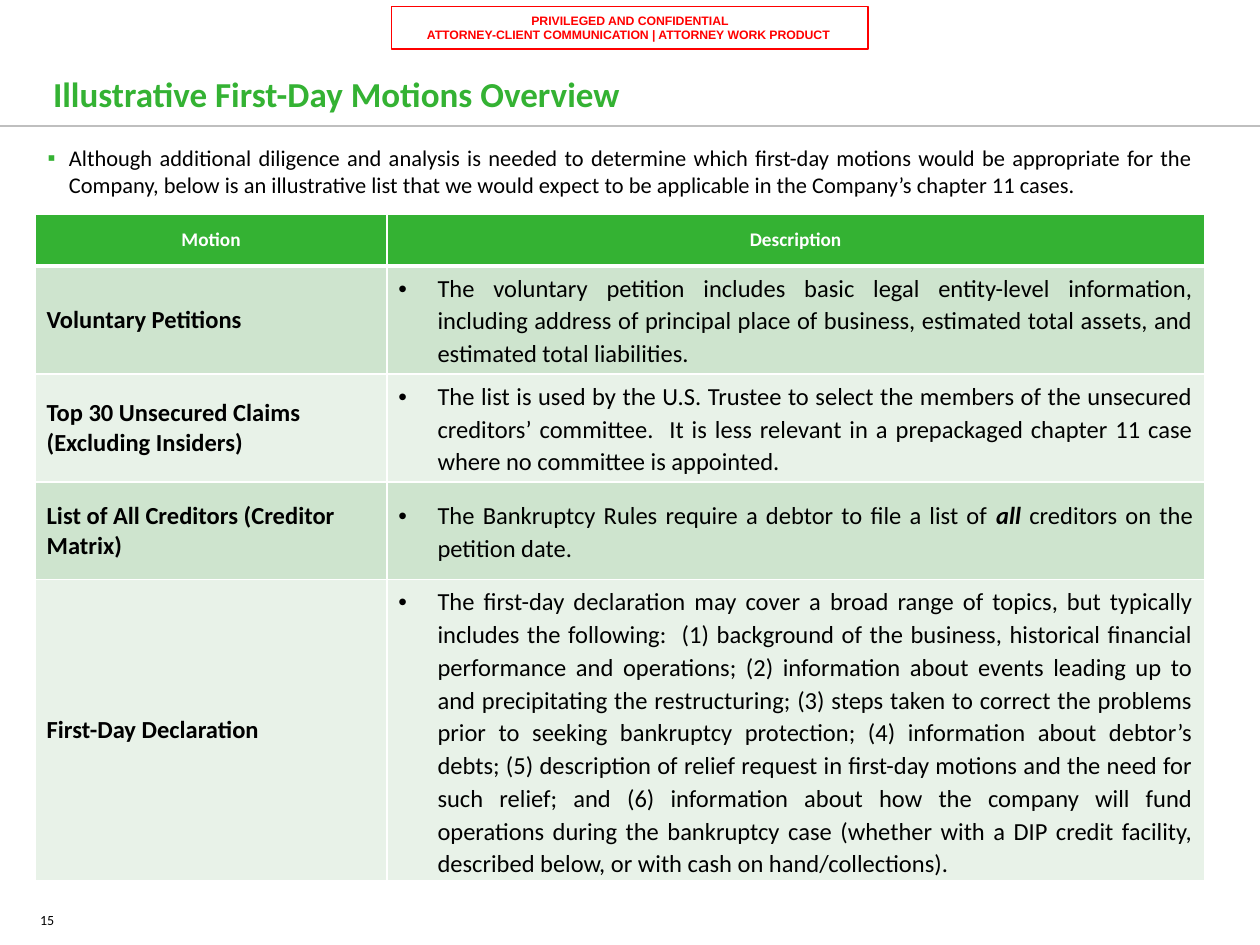
from lxml import etree
from pptx import Presentation, util as u
from pptx.dml.color import RGBColor
from pptx.enum import shapes, text
from pptx.oxml import ns

GREEN = RGBColor(0x34, 0xB2, 0x33)
MID_GREEN = RGBColor(0xCE, 0xE4, 0xCE)
PALE_GREEN = RGBColor(0xE8, 0xF2, 0xE8)
GREY = RGBColor(0xBF, 0xBF, 0xBF)
RED = RGBColor(0xFF, 0, 0)
BLACK = RGBColor(0, 0, 0)
WHITE = RGBColor(0xFF, 0xFF, 0xFF)
ALIGN = text.PP_ALIGN
ANCHOR = text.MSO_ANCHOR


def write(frame, content, size, color=BLACK, font="Calibri", bold=False, align=ALIGN.LEFT,
          anchor=ANCHOR.TOP, margins=(0.25, 0.13, 0.25, 0.13), before=0, after=0,
          spacing=None, bullet=None, bullet_color=None, indent=0):
    """Write one paragraph per line; text between asterisks is bold italic."""
    frame.word_wrap = True
    frame.vertical_anchor = anchor
    (frame.margin_left, frame.margin_top,
     frame.margin_right, frame.margin_bottom) = [u.Cm(margin) for margin in margins]
    for number, line in enumerate(content.split("\n")):
        para = frame.add_paragraph() if number else frame.paragraphs[0]
        if bullet:
            props = para._p.get_or_add_pPr()
            props.set("marL", str(u.Cm(indent)))
            props.set("indent", str(-u.Cm(indent)))
            if bullet_color:
                holder = etree.SubElement(props, ns.qn("a:buClr"))
                etree.SubElement(holder, ns.qn("a:srgbClr"), val=str(bullet_color))
            etree.SubElement(props, ns.qn("a:buFont"), typeface="Arial")
            etree.SubElement(props, ns.qn("a:buChar"), char=bullet)
        para.alignment = align
        para.space_before, para.space_after = u.Pt(before), u.Pt(after)
        if spacing:
            para.line_spacing = spacing
        for part, words in enumerate(line.split("*")):
            for piece, segment in enumerate(words.split("\v")):
                if piece:
                    para.add_line_break()
                span = para.add_run()
                span.text = segment
                span.font.name, span.font.size = font, u.Pt(size)
                span.font.bold = bold or part % 2 == 1
                span.font.italic = part % 2 == 1
                span.font.color.rgb = color


def set_border(cell, side, width):
    line = etree.SubElement(cell._tc.get_or_add_tcPr(), ns.qn(f"a:ln{side}"), w=str(u.Pt(width)))
    fill = etree.SubElement(line, ns.qn("a:solidFill"))
    etree.SubElement(fill, ns.qn("a:srgbClr"), val=str(WHITE))


deck = Presentation()
deck.slide_width, deck.slide_height = u.Cm(25.4), u.Cm(19.05)
page = deck.slides.add_slide(deck.slide_layouts[6])

# Page number
box = page.shapes.add_textbox(u.Cm(0.81), u.Cm(18.24), u.Cm(5.33), u.Cm(0.61))
write(box.text_frame, "15", 8, margins=(0, 0.13, 0, 0.13))

# Rule under the title
rule = page.shapes.add_connector(shapes.MSO_CONNECTOR.STRAIGHT,
                                 u.Cm(0), u.Cm(2.54), u.Cm(25.4), u.Cm(2.54))
rule.line.color.rgb, rule.line.width = GREY, u.Pt(0.75)
etree.SubElement(rule._element.spPr, ns.qn("a:effectLst"))

# Confidentiality stamp
stamp = page.shapes.add_shape(shapes.MSO_SHAPE.RECTANGLE,
                              u.Cm(7.9), u.Cm(0.13), u.Cm(9.6), u.Cm(0.86))
stamp.shadow.inherit = False
stamp.fill.background()
stamp.line.color.rgb, stamp.line.width = RED, u.Pt(0.75)
write(stamp.text_frame,
      "PRIVILEGED AND CONFIDENTIAL\nATTORNEY-CLIENT COMMUNICATION | ATTORNEY WORK PRODUCT ",
      7, RED, "Arial", bold=True, align=ALIGN.CENTER, anchor=ANCHOR.MIDDLE)

# Title
box = page.shapes.add_textbox(u.Cm(1.07), u.Cm(1.12), u.Cm(22.91), u.Cm(1.32))
write(box.text_frame, "Illustrative First-Day Motions Overview", 20, GREEN, bold=True,
      anchor=ANCHOR.BOTTOM, margins=(0, 0.13, 0.25, 0.13))

# Table of motions
rows = [
    ("Motion", "Description"),
    ("Voluntary Petitions",
     "The voluntary petition includes basic legal entity-level information, including address "
     "of principal place of business, estimated total assets, and estimated total liabilities."),
    ("Top 30 Unsecured Claims \v(Excluding Insiders)",
     "The list is used by the U.S. Trustee to select the members of the unsecured creditors’ "
     "committee.  It is less relevant in a prepackaged chapter 11 case where no committee is "
     "appointed."),
    ("List of All Creditors (Creditor Matrix)",
     "The Bankruptcy Rules require a debtor to file a list of *all* creditors on the petition "
     "date."),
    ("First-Day Declaration",
     "The first-day declaration may cover a broad range of topics, but typically includes the "
     "following:  (1) background of the business, historical financial performance and "
     "operations; (2) information about events leading up to and precipitating the "
     "restructuring; (3) steps taken to correct the problems prior to seeking bankruptcy "
     "protection; (4) information about debtor’s debts; (5) description of relief request in "
     "first-day motions and the need for such relief; and (6) information about how the company "
     "will fund operations during the bankruptcy case (whether with a DIP credit facility, "
     "described below, or with cash on hand/collections)."),
]
heights = [1.04, 2.18, 2.18, 1.96, 6]
table = page.shapes.add_table(len(rows), 2, u.Cm(0.71), u.Cm(4.32),
                              u.Cm(23.57), u.Cm(sum(heights))).table
table.columns[0].width, table.columns[1].width = u.Cm(7.09), u.Cm(16.48)
cell_margins = (0.23, 0.1, 0.23, 0.1)
for row, (contents, height) in enumerate(zip(rows, heights)):
    table.rows[row].height = u.Cm(height)
    for column, content in enumerate(contents):
        cell = table.cell(row, column)
        for side in "LRTB":
            header_edge = (row, side) in ((0, "B"), (1, "T"))
            set_border(cell, side, 3 if header_edge else 1)
        cell.fill.solid()
        cell.fill.fore_color.rgb = (MID_GREEN if row % 2 else PALE_GREEN) if row else GREEN
        cell.vertical_anchor = ANCHOR.MIDDLE
        (cell.margin_left, cell.margin_top,
         cell.margin_right, cell.margin_bottom) = [u.Cm(margin) for margin in cell_margins]
        if row == 0:
            style = dict(size=11, color=WHITE, bold=True, align=ALIGN.CENTER)
        elif column == 0:
            style = dict(size=14, bold=True)
        else:
            style = dict(size=14, align=ALIGN.JUSTIFY, spacing=1.1, bullet="•", indent=0.79)
        write(cell.text_frame, content, anchor=ANCHOR.MIDDLE, margins=cell_margins, **style)

# Introductory bullet
box = page.shapes.add_textbox(u.Cm(0.71), u.Cm(2.77), u.Cm(23.57), u.Cm(1.35))
write(box.text_frame,
      "Although additional diligence and analysis is needed to determine which first-day motions "
      "would be appropriate for the Company, below is an illustrative list that we would expect "
      "to be applicable in the Company’s chapter 11 cases.",
      12.8, align=ALIGN.JUSTIFY, after=4, bullet="▪", bullet_color=GREEN, indent=0.43)

deck.save("out.pptx")
